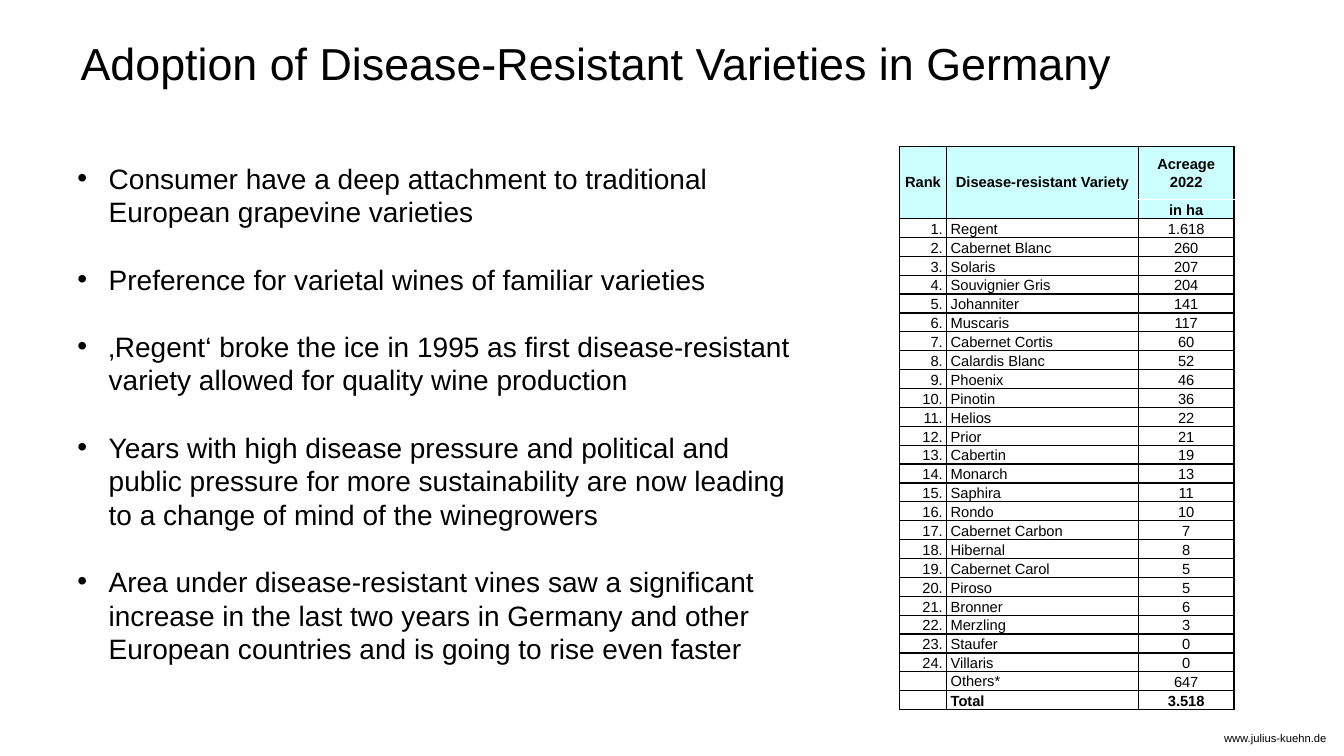
from lxml import etree
from pptx import Presentation
from pptx.dml.color import RGBColor
from pptx.enum.text import MSO_ANCHOR, PP_ALIGN
from pptx.oxml.ns import qn
from pptx.util import Inches, Pt

LEFT, CENTER, RIGHT = PP_ALIGN.LEFT, PP_ALIGN.CENTER, PP_ALIGN.RIGHT
TOP, MIDDLE, BOTTOM = MSO_ANCHOR.TOP, MSO_ANCHOR.MIDDLE, MSO_ANCHOR.BOTTOM

# Content
TITLE = "Adoption of Disease-Resistant Varieties in Germany"
FOOTER = "www.julius-kuehn.de"
BULLETS = [
    "Consumer have a deep attachment to traditional European grapevine varieties",
    "Preference for varietal wines of familiar varieties",
    "‚Regent‘ broke the ice in 1995 as first disease-resistant variety "
    "allowed for quality wine production",
    "Years with high disease pressure and political and public pressure for more "
    "sustainability are now leading to a change of mind of the winegrowers",
    "Area under disease-resistant vines saw a significant increase in the last two years "
    "in Germany and other European countries and is going to rise even faster",
]
HEADER = [("Rank", "Disease-resistant Variety", "Acreage 2022"), ("", "", "in ha")]
VARIETIES = [
    ("Regent", "1.618"), ("Cabernet Blanc", "260"), ("Solaris", "207"),
    ("Souvignier Gris", "204"), ("Johanniter", "141"), ("Muscaris", "117"),
    ("Cabernet Cortis", "60"), ("Calardis Blanc", "52"), ("Phoenix", "46"),
    ("Pinotin", "36"), ("Helios", "22"), ("Prior", "21"), ("Cabertin", "19"),
    ("Monarch", "13"), ("Saphira", "11"), ("Rondo", "10"), ("Cabernet Carbon", "7"),
    ("Hibernal", "8"), ("Cabernet Carol", "5"), ("Piroso", "5"), ("Bronner", "6"),
    ("Merzling", "3"), ("Staufer", "0"), ("Villaris", "0"),
]
SUMMARY = [("", "Others*", "647"), ("", "Total", "3.518")]

FONT = "Arial"
COLORS = {"text": "000000", "line": "000000", "header": "CCFFFF"}
COLUMN_WIDTHS = [0.47, 1.9, 0.95]
COLUMN_ALIGNS = [RIGHT, LEFT, CENTER]
TABLE_HEIGHT, FIRST_ROW_HEIGHT = 5.59, 0.53
CELL_SIZE = 10.5


def add_span(para, text, size, bold=False):
    span = para.add_run()
    span.text = text
    span.font.name = FONT
    span.font.size = Pt(size)
    span.font.bold = bold
    span.font.color.rgb = RGBColor.from_string(COLORS["text"])


def add_box(page, left, top, width, height):
    box = page.shapes.add_textbox(Inches(left), Inches(top), Inches(width), Inches(height))
    return box.text_frame


def add_bullet(para):
    properties = para._p.get_or_add_pPr()
    properties.set("marL", str(Inches(0.31)))
    properties.set("indent", str(-Inches(0.31)))
    etree.SubElement(properties, qn("a:buFont")).set("typeface", FONT)
    etree.SubElement(properties, qn("a:buChar")).set("char", "•")


def set_borders(cell, sides):
    properties = cell._tc.get_or_add_tcPr()
    for index, side in enumerate(sides):
        line = etree.Element(qn("a:ln" + side), w=str(Pt(1)))
        fill = etree.SubElement(line, qn("a:solidFill"))
        etree.SubElement(fill, qn("a:srgbClr")).set("val", COLORS["line"])
        properties.insert(index, line)


def fill_cell(cell, text, align, anchor, bold):
    cell.margin_left = cell.margin_right = Inches(0.04)
    cell.margin_top = cell.margin_bottom = 0
    cell.vertical_anchor = anchor
    para = cell.text_frame.paragraphs[0]
    para.alignment = align
    para.line_spacing = 1.07
    if text:
        add_span(para, text, CELL_SIZE, bold)
    else:
        # Keep empty cells as low as the filled ones
        etree.SubElement(para._p, qn("a:endParaRPr")).set("sz", str(int(CELL_SIZE * 100)))


def add_variety_table(page):
    ranked = [(f"{rank}.", *entry) for rank, entry in enumerate(VARIETIES, 1)]
    rows = HEADER + ranked + SUMMARY
    frame = page.shapes.add_table(len(rows), len(COLUMN_WIDTHS), Inches(8.92), Inches(1.45),
                                  Inches(sum(COLUMN_WIDTHS)), Inches(TABLE_HEIGHT))
    table = frame.table
    table.first_row = table.horz_banding = False
    for column, width in zip(table.columns, COLUMN_WIDTHS):
        column.width = Inches(width)
    row_height = (TABLE_HEIGHT - FIRST_ROW_HEIGHT) / (len(rows) - 1)
    for r, values in enumerate(rows):
        table.rows[r].height = Inches(row_height if r else FIRST_ROW_HEIGHT)
        in_header = r < len(HEADER)
        bold = in_header or r == len(rows) - 1
        for c, text in enumerate(values):
            cell = table.cell(r, c)
            anchor = MIDDLE if r == 0 or text == "Others*" else BOTTOM
            fill_cell(cell, text, CENTER if in_header else COLUMN_ALIGNS[c], anchor, bold)
            if in_header:
                cell.fill.solid()
                cell.fill.fore_color.rgb = RGBColor.from_string(COLORS["header"])
            else:
                cell.fill.background()
            # The two acreage header cells have no line between them
            sides = ["L", "R", "T", "B"]
            if in_header and c == 2:
                sides.remove("T" if r else "B")
            set_borders(cell, sides)
    for c in (0, 1):
        table.cell(0, c).merge(table.cell(1, c))


def main():
    deck = Presentation()
    deck.slide_width, deck.slide_height = Inches(13.33), Inches(7.5)
    page = deck.slides.add_slide(deck.slide_layouts[5])

    # Title
    title = page.shapes.title
    title.left, title.top = Inches(0.54), Inches(0.3)
    title.width, title.height = Inches(10.75), Inches(1.25)
    title.text_frame.vertical_anchor = TOP
    title.text_frame.paragraphs[0].alignment = CENTER
    add_span(title.text_frame.paragraphs[0], TITLE, 32)

    # Bullet list
    body = add_box(page, 0.67, 1.55, 7.33, 5.82)
    body.word_wrap = True
    for index, text in enumerate(BULLETS):
        para = body.add_paragraph() if index else body.paragraphs[0]
        para.line_spacing = Pt(24)
        if index:
            para.space_before = Pt(24)
        add_bullet(para)
        add_span(para, text, 20)

    # Acreage table
    add_variety_table(page)

    # Footer address
    footer = add_box(page, 12.14, 7.26, 1.05, 0.2)
    footer.margin_left = footer.margin_right = footer.margin_top = footer.margin_bottom = 0
    footer.word_wrap = False
    add_span(footer.paragraphs[0], FOOTER, 8)

    deck.save("out.pptx")


if __name__ == "__main__":
    main()
